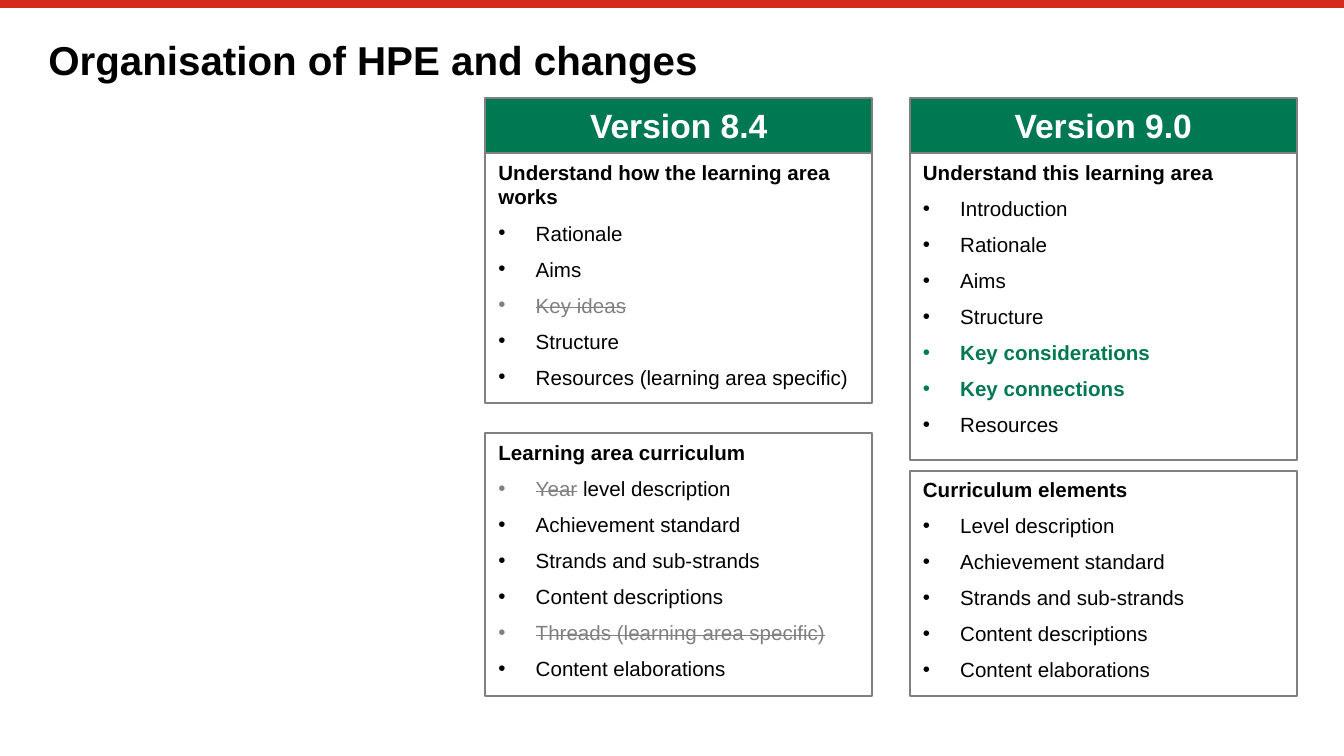
from lxml.etree import SubElement
from pptx import Presentation
from pptx.dml.color import RGBColor
from pptx.enum.shapes import MSO_CONNECTOR, MSO_SHAPE
from pptx.enum.text import MSO_ANCHOR, PP_ALIGN
from pptx.oxml.ns import qn
from pptx.util import Pt

RED = RGBColor(0xD5, 0x2B, 0x1E)
GREEN = RGBColor(0x00, 0x78, 0x52)
GREY = RGBColor(0x80, 0x80, 0x80)
BLACK = RGBColor(0x00, 0x00, 0x00)
WHITE = RGBColor(0xFF, 0xFF, 0xFF)

WIDTH = 207.4
TOP = 52.5
HEAD = 29.6

# Each column: left edge, version, then boxes of (top, height, heading, items).
# ~text~ marks removed wording, a leading * marks a new item.
COLUMNS = [
    (487.3, "Version 9.0", [
        (252.1, 120.6, "Curriculum elements",
         ["Level description", "Achievement standard", "Strands and sub-strands",
          "Content descriptions", "Content elaborations"]),
        (82.1, 164.2, "Understand this learning area",
         ["Introduction", "Rationale", "Aims", "Structure",
          "*Key considerations", "*Key connections", "Resources"]),
    ]),
    (259.9, "Version 8.4", [
        (82.1, 133.9, "Understand how the learning area works",
         ["Rationale", "Aims", "~Key ideas~", "Structure",
          "Resources (learning area specific)"]),
        (232.2, 140.6, "Learning area curriculum",
         ["~Year~ level description", "Achievement standard",
          "Strands and sub-strands", "Content descriptions",
          "~Threads (learning area specific)~", "Content elaborations"]),
    ]),
]


def add_box(left, top, height):
    """Add a grey-outlined, unfilled rectangle of column width."""
    box = slide.shapes.add_shape(
        MSO_SHAPE.RECTANGLE, Pt(left), Pt(top), Pt(WIDTH), Pt(height))
    box.shadow.inherit = False
    box.fill.background()
    box.line.color.rgb = GREY
    box.line.width = Pt(1)
    box.text_frame.word_wrap = True
    box.text_frame.vertical_anchor = MSO_ANCHOR.TOP
    box.text_frame.paragraphs[0].alignment = PP_ALIGN.LEFT
    return box


def style(para, size, color, bold):
    font = para.font
    font.name = "Arial"
    font.size = Pt(size)
    font.bold = bold
    font.color.rgb = color


deck = Presentation()
deck.slide_width = Pt(720)
deck.slide_height = Pt(405)
slide = deck.slides.add_slide(deck.slide_layouts[6])

bar = slide.shapes.add_connector(
    MSO_CONNECTOR.STRAIGHT, Pt(0), Pt(2.1), Pt(720), Pt(2.1))
bar.line.color.rgb = RED
bar.line.width = Pt(4.2)
SubElement(bar.element.spPr, qn("a:effectLst"))

for left, version, boxes in COLUMNS:
    for top, height, heading, items in boxes:
        frame = add_box(left, top, height).text_frame
        para = frame.paragraphs[0]
        para.text = heading
        style(para, 11, BLACK, True)
        for item in items:
            para = frame.add_paragraph()
            para.alignment = PP_ALIGN.LEFT
            para.space_before = Pt(6.1)
            props = para._p.get_or_add_pPr()
            props.set("marL", str(Pt(20)))
            props.set("indent", str(-Pt(20)))
            SubElement(props, qn("a:buFont"), typeface="Arial")
            SubElement(props, qn("a:buChar"), char="•")
            new = item.startswith("*")
            style(para, 11, GREEN if new else BLACK, new)
            for i, part in enumerate(item.lstrip("*").split("~")):
                if not part:
                    continue
                run = para.add_run()
                run.text = part
                if i % 2:
                    run.font.color.rgb = GREY
                    run._r.get_or_add_rPr().set("strike", "sngStrike")

    head = add_box(left, TOP, HEAD)
    head.fill.solid()
    head.fill.fore_color.rgb = GREEN
    para = head.text_frame.paragraphs[0]
    para.text = version
    para.alignment = PP_ALIGN.CENTER
    style(para, 18, WHITE, True)

title = slide.shapes.add_textbox(Pt(25.9), Pt(21.6), Pt(668.9), Pt(28.1))
frame = title.text_frame
frame.word_wrap = True
frame.margin_left = frame.margin_right = Pt(0)
frame.margin_top = frame.margin_bottom = Pt(0)
para = frame.paragraphs[0]
para.text = "Organisation of HPE and changes"
para.line_spacing = 0.9
style(para, 21.6, BLACK, True)

deck.save("out.pptx")
